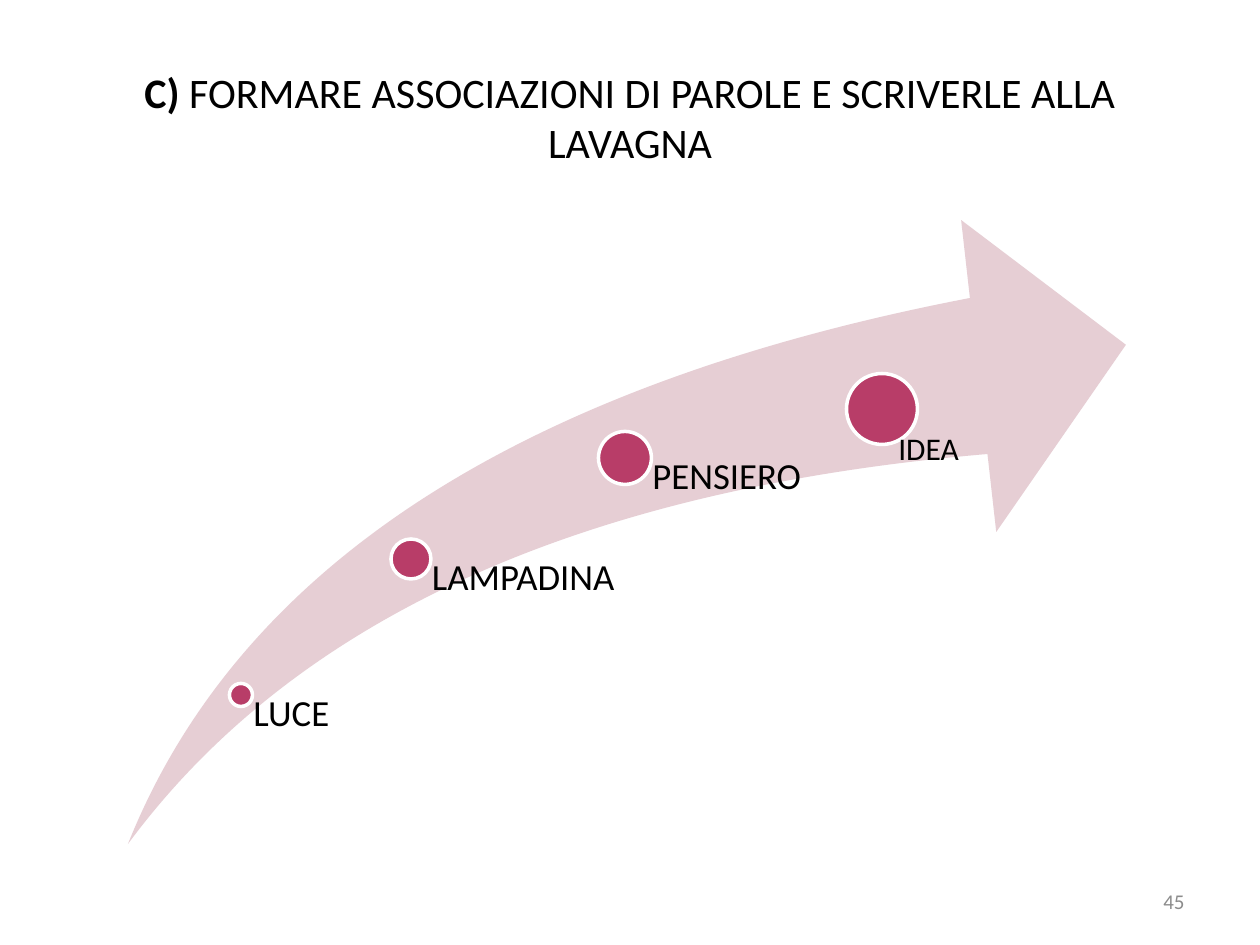
from pptx import Presentation
from pptx import util as u
from pptx.dml.color import RGBColor
from pptx.enum import shapes, text

PX = u.Inches(1) / 126
BLACK = RGBColor(0x00, 0x00, 0x00)
WHITE = RGBColor(0xFF, 0xFF, 0xFF)
GREY = RGBColor(0x8C, 0x8C, 0x8C)
PINK = RGBColor(0xE6, 0xCE, 0xD4)
ROSE = RGBColor(0xB8, 0x3D, 0x68)

# centre x and y within the arrow, diameter, label, label width
STEPS = [
    (113, 475, 23, "LUCE", 170),
    (283, 339, 40, "LAMPADINA", 209),
    (497, 238, 53, "PENSIERO", 209),
    (754, 189, 71, None, 0),
]


def emu(*sizes):
    return [u.Emu(round(n * PX)) for n in sizes]


def style(para, size, color, align=text.PP_ALIGN.LEFT):
    para.alignment = align
    para.font.name = "Calibri"
    para.font.size = u.Pt(size)
    para.font.color.rgb = color


def add_shape(slide, kind, box, fill):
    shape = slide.shapes.add_shape(kind, *emu(*box))
    shape.shadow.inherit = False
    shape.fill.solid()
    shape.fill.fore_color.rgb = fill
    shape.line.fill.background()
    return shape


def add_text(slide, box, words, size, color=BLACK, align=text.PP_ALIGN.LEFT):
    frame = slide.shapes.add_textbox(*emu(*box)).text_frame
    frame.word_wrap = True
    para = frame.paragraphs[0]
    para.text = words
    style(para, size, color, align)
    return frame


def add_title(slide, box):
    title = slide.shapes.title
    title.left, title.top, title.width, title.height = emu(*box)
    frame = title.text_frame
    frame.vertical_anchor = text.MSO_ANCHOR.MIDDLE
    para = frame.paragraphs[0]
    lead, rest = para.add_run(), para.add_run()
    lead.text = "C) "
    lead.font.bold = True
    rest.text = "FORMARE ASSOCIAZIONI DI PAROLE E SCRIVERLE ALLA LAVAGNA"
    style(para, 24, BLACK, text.PP_ALIGN.CENTER)


def add_path(slide, box):
    """Draw the rising arrow with its dots; labels reach down to its base."""
    left, top, width, height = box
    arrow = add_shape(slide, shapes.MSO_SHAPE.SWOOSH_ARROW, box, PINK)
    arrow.adjustments[0] = arrow.adjustments[1] = 0.25
    for x, y, size, word, span in STEPS:
        mid, level = left + x, top + y
        dot = add_shape(slide, shapes.MSO_SHAPE.OVAL,
                        (mid - size / 2, level - size / 2, size, size), ROSE)
        dot.line.color.rgb = WHITE
        dot.line.width = u.Pt(2)
        if word:
            frame = add_text(slide, (mid, level, span, height - y), word, 21)
            frame.margin_left = emu(size / 2 + 1)[0]
            frame.margin_top = frame.margin_right = frame.margin_bottom = 0
            frame.paragraphs[0].line_spacing = 0.9

    idea = add_text(slide, (left + 758, top + 203, 87, 50), "IDEA", 18)
    idea.word_wrap = False
    idea.auto_size = text.MSO_AUTO_SIZE.SHAPE_TO_FIT_TEXT


def add_number(slide, box):
    frame = add_text(slide, box, "45", 12, GREY, text.PP_ALIGN.RIGHT)
    frame.vertical_anchor = text.MSO_ANCHOR.MIDDLE


def main():
    deck = Presentation()
    deck.slide_width, deck.slide_height = emu(1260, 945)
    slide = deck.slides.add_slide(deck.slide_layouts[5])
    add_title(slide, (63, 38, 1134, 158))
    add_path(slide, (128, 220, 998, 624))
    add_number(slide, (903, 876, 294, 50))
    deck.save("out.pptx")


if __name__ == "__main__":
    main()
